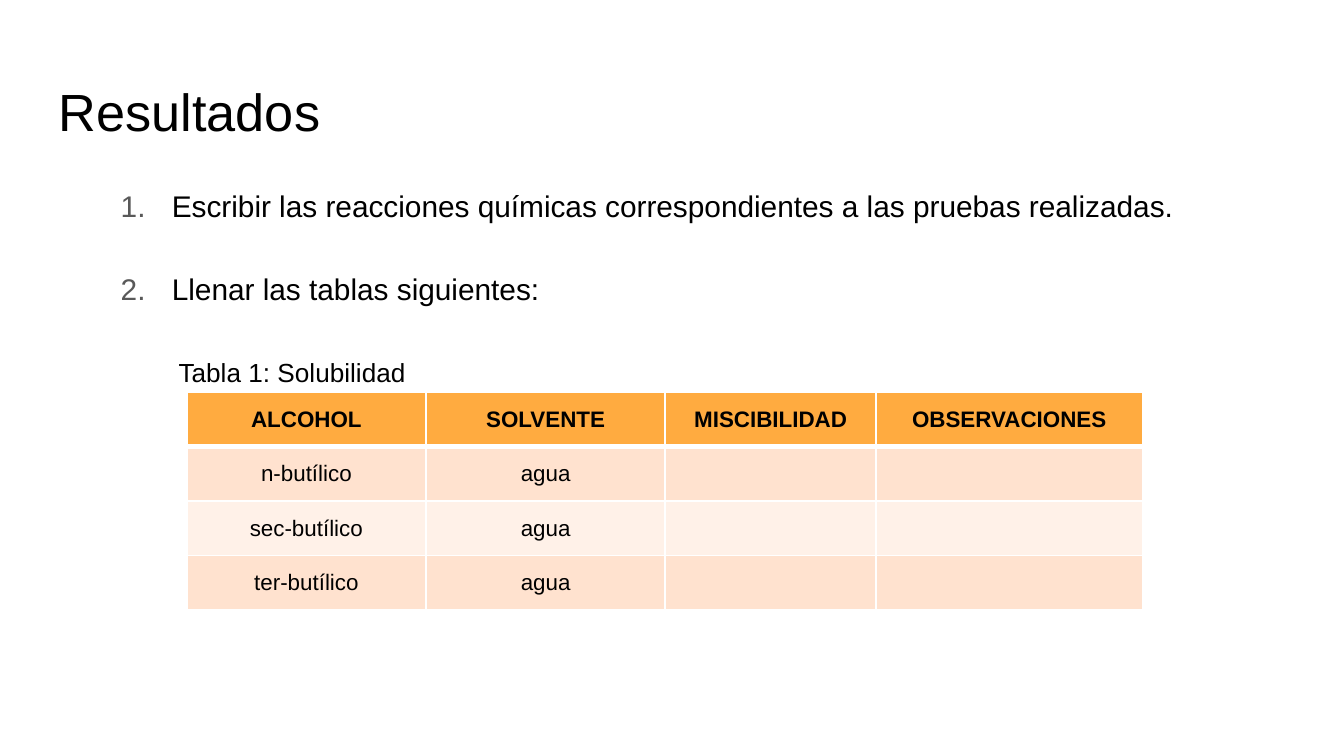
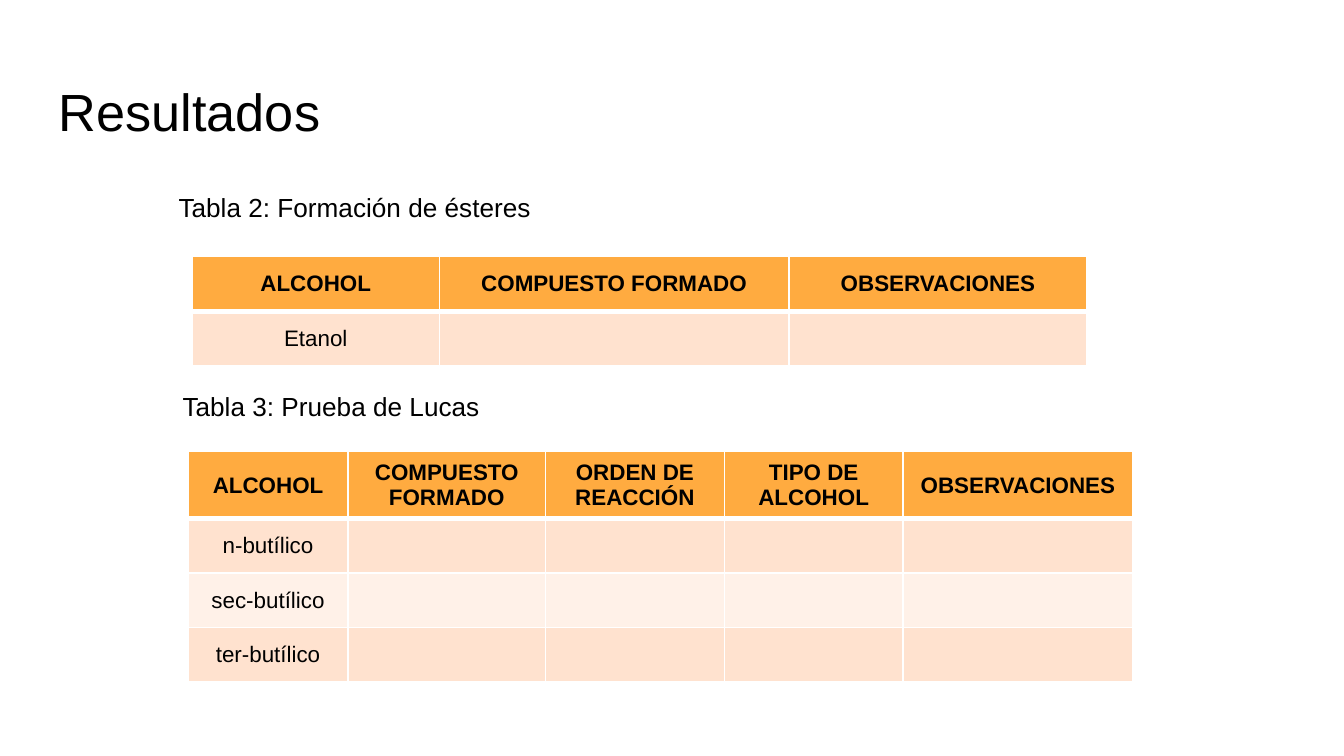
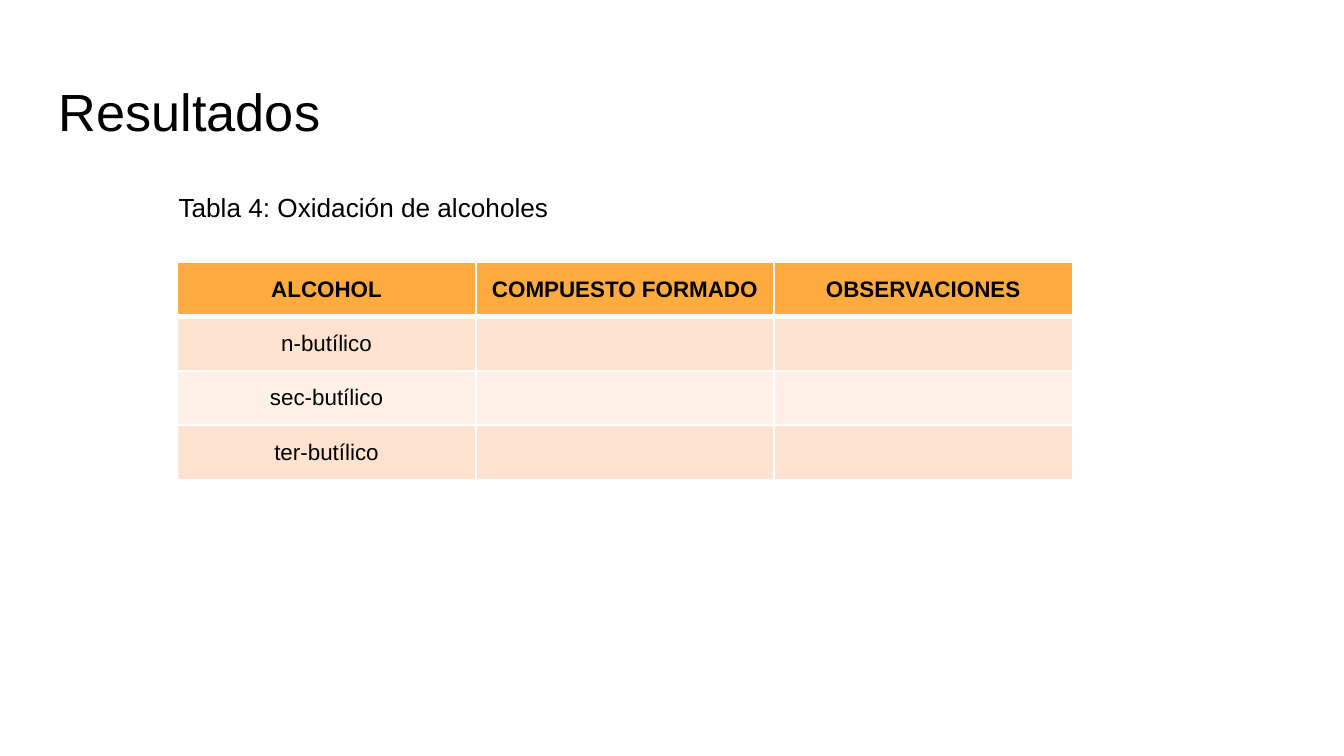
from lxml import etree
from pptx import Presentation
from pptx import util as u
from pptx.dml import color
from pptx.enum import text
from pptx.oxml import ns

FONT = "Arial"
BLACK, WHITE, GREY = "000000", "FFFFFF", "595959"
ORANGE, PEACH, CREAM = "FFAB40", "FFE2CF", "FFF1E8"
ROW_HEIGHT = 1.62 / 4
BUTANOLS = ["n-butílico", "sec-butílico", "ter-butílico"]


def rgb(value):
    return color.RGBColor.from_string(value)


def add_span(para, words, size, bold=False):
    span = para.add_run()
    span.text = words
    span.font.name = FONT
    span.font.size = u.Pt(size)
    span.font.bold = bold
    span.font.color.rgb = rgb(BLACK)


def add_box(page, left, top, width, height, top_inset=0.1):
    box = page.shapes.add_textbox(*map(u.Inches, (left, top, width, height)))
    frame = box.text_frame
    frame.word_wrap = True
    frame.margin_left = frame.margin_right = frame.margin_bottom = u.Inches(0.1)
    frame.margin_top = u.Inches(top_inset)
    return frame


def add_page(deck):
    """Add a white page with the shared title."""
    page = deck.slides.add_slide(deck.slide_layouts[6])
    page.background.fill.solid()
    page.background.fill.fore_color.rgb = rgb(WHITE)
    title = add_box(page, 0.34, 0.49, 9.32, 0.63)
    add_span(title.paragraphs[0], "Resultados", 28)
    return page


def add_body(page, top_inset=0.13):
    return add_box(page, 0.8, 1.26, 8.25, 3.94, top_inset)


def add_body_para(body, words, size, indent, space=0):
    """Fill the first paragraph, or append one set off by space points."""
    para = body.paragraphs[0]
    if para.runs:
        para = body.add_paragraph()
        para.space_before = u.Pt(space)
    para.line_spacing = 1.15
    para.alignment = text.PP_ALIGN.JUSTIFY
    para._p.get_or_add_pPr().set("marL", str(u.Inches(indent)))
    add_span(para, words, size)
    return para


def add_caption(body, words, indent=0.43, space=0):
    return add_body_para(body, words, 14, indent, space)


def add_numbered(body, words, space=0):
    props = add_body_para(body, words, 16, 0.38, space)._p.get_or_add_pPr()
    props.set("indent", str(u.Inches(-0.38)))
    tint = etree.SubElement(props, ns.qn("a:buClr"))
    etree.SubElement(tint, ns.qn("a:srgbClr"), val=GREY)
    etree.SubElement(props, ns.qn("a:buFont"), typeface=FONT)
    etree.SubElement(props, ns.qn("a:buAutoNum"), type="arabicPeriod")


def set_borders(cell, top, bottom):
    """Draw white cell edges; top and bottom are widths in points."""
    props = cell._tc.get_or_add_tcPr()
    for place, (side, width) in enumerate(zip("LRTB", (1, 1, top, bottom))):
        edge = etree.Element(ns.qn(f"a:ln{side}"), w=str(u.Pt(width)))
        fill = etree.SubElement(edge, ns.qn("a:solidFill"))
        etree.SubElement(fill, ns.qn("a:srgbClr"), val=WHITE)
        props.insert(place, edge)


def add_results_table(page, left, top, widths, headings, rows):
    """Add a banded table; cells missing from a row stay empty."""
    lines = [headings] + rows
    table = page.shapes.add_table(
        len(lines), len(widths), u.Inches(left), u.Inches(top),
        u.Inches(sum(widths)), u.Inches(ROW_HEIGHT * len(lines))).table
    for column, width in zip(table.columns, widths):
        column.width = u.Inches(width)
    for r, words in enumerate(lines):
        band = ORANGE if r == 0 else PEACH if r % 2 else CREAM
        for c, cell in enumerate(table.rows[r].cells):
            cell.fill.solid()
            cell.fill.fore_color.rgb = rgb(band)
            set_borders(cell, 3 if r == 1 else 1, 3 if r == 0 else 1)
            cell.vertical_anchor = text.MSO_ANCHOR.MIDDLE
            if c < len(words):
                para = cell.text_frame.paragraphs[0]
                para.alignment = text.PP_ALIGN.CENTER
                add_span(para, words[c], 12, bold=r == 0)


def add_solubility_page(deck):
    page = add_page(deck)
    body = add_body(page, top_inset=0.1)
    add_numbered(body, "Escribir las reacciones químicas correspondientes a las pruebas realizadas.")
    add_numbered(body, "Llenar las tablas siguientes:", space=22.3)
    add_caption(body, "Tabla 1: Solubilidad", space=24.2)
    add_results_table(
        page, 1.39, 2.92, [1.78, 1.78, 1.57, 1.98],
        ["ALCOHOL", "SOLVENTE", "MISCIBILIDAD", "OBSERVACIONES"],
        [[alcohol, "agua"] for alcohol in BUTANOLS])


def add_ester_and_lucas_page(deck):
    page = add_page(deck)
    body = add_body(page)
    add_caption(body, "Tabla 2: Formación de ésteres")
    lucas = add_caption(body, "Tabla 3: Prueba de Lucas", indent=0.46, space=87.5)
    lucas.alignment = text.PP_ALIGN.LEFT
    add_results_table(
        page, 1.43, 1.91, [1.84, 2.6, 2.22],
        ["ALCOHOL", "COMPUESTO FORMADO", "OBSERVACIONES"], [["Etanol"]])
    add_results_table(
        page, 1.4, 3.36, [1.19, 1.47, 1.33, 1.33, 1.71],
        ["ALCOHOL", "COMPUESTO FORMADO", "ORDEN DE REACCIÓN",
         "TIPO DE ALCOHOL", "OBSERVACIONES"],
        [[alcohol] for alcohol in BUTANOLS])


def add_oxidation_page(deck):
    page = add_page(deck)
    add_caption(add_body(page), "Tabla 4: Oxidación de alcoholes")
    add_results_table(
        page, 1.32, 1.95, [2.22] * 3,
        ["ALCOHOL", "COMPUESTO FORMADO", "OBSERVACIONES"],
        [[alcohol] for alcohol in BUTANOLS])


def main():
    deck = Presentation()
    deck.slide_width = u.Inches(10)
    deck.slide_height = u.Inches(10 * 9 / 16)
    add_solubility_page(deck)
    add_ester_and_lucas_page(deck)
    add_oxidation_page(deck)
    deck.save("out.pptx")


if __name__ == "__main__":
    main()
